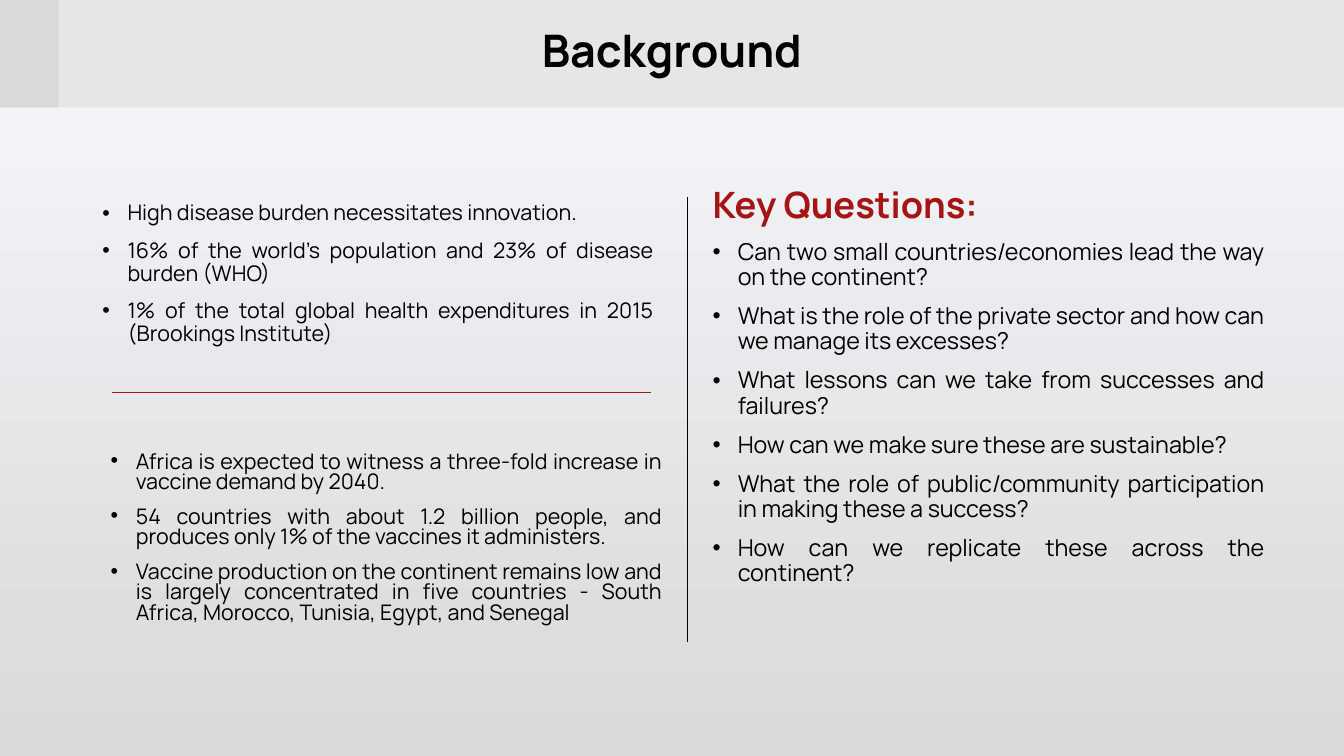
import pptx
import pptx.util
import pptx.dml.color
import pptx.enum.shapes
import pptx.enum.text
import lxml.etree

COLORS = {
    "sky": "F6F8FC",
    "gray": "D9D9D9",
    "band": "E7E5E6",
    "ink": "000000",
    "red": "A61414",
}
FONT = "Manrope"
COLUMNS, ROWS = 160, 90
WIDTH, HEIGHT = pptx.util.Inches(13.333), pptx.util.Inches(7.5)
ALIGN = pptx.enum.text.PP_ALIGN
ANCHOR = pptx.enum.text.MSO_ANCHOR

BURDEN = [
    "High disease burden necessitates innovation.",
    "16% of the world’s population and 23% of disease burden (WHO)",
    "1% of the total global health expenditures in 2015 (Brookings Institute)",
]
VACCINES = [
    "Africa is expected to witness a three-fold increase in vaccine demand by 2040.",
    "54 countries with about 1.2 billion people, and produces only 1% of the vaccines it administers.",
    "Vaccine production on the continent remains low and is largely concentrated in five countries"
    " - South Africa, Morocco, Tunisia, Egypt, and Senegal",
]
QUESTIONS = [
    "Can two small countries/economies lead the way on the continent?",
    "What is the role of the private sector and how can we manage its excesses?",
    "What lessons can we take from successes and failures?",
    "How can we make sure these are sustainable?",
    "What the role of public/community participation in making these a success?",
    "How can we replicate these across the continent?",
]


def rgb(name):
    return pptx.dml.color.RGBColor.from_string(COLORS[name])


def across(columns):
    return round(WIDTH * columns / COLUMNS)


def down(rows):
    return round(HEIGHT * rows / ROWS)


def place(box):
    left, top, width, height = box
    return across(left), down(top), across(width), down(height)


def paint_background(page):
    fill = page.background.fill
    fill.gradient()
    fill.gradient_angle = 270
    for stop, name in zip(fill.gradient_stops, ("sky", "gray")):
        stop.color.rgb = rgb(name)


def add_block(page, box, color):
    block = page.shapes.add_shape(pptx.enum.shapes.MSO_SHAPE.RECTANGLE, *place(box))
    block.shadow.inherit = False
    block.fill.solid()
    block.fill.fore_color.rgb = rgb(color)
    block.line.fill.background()


def add_rule(page, start, end, color):
    rule = page.shapes.add_connector(
        pptx.enum.shapes.MSO_CONNECTOR.STRAIGHT,
        across(start[0]), down(start[1]), across(end[0]), down(end[1]),
    )
    rule.line.color.rgb = rgb(color)
    rule.line.width = pptx.util.Pt(0.5)
    lxml.etree.SubElement(rule.line._get_or_add_ln().getparent(), pptx.oxml.ns.qn("a:effectLst"))


def add_frame(page, box, anchor=ANCHOR.TOP):
    frame = page.shapes.add_textbox(*place(box)).text_frame
    frame.word_wrap = True
    frame.vertical_anchor = anchor
    return frame


def add_para(frame, text, size, align=ALIGN.JUSTIFY, spacing=0.9, color="ink", bold=False, bullet=False):
    first = not frame.paragraphs[0].runs
    para = frame.paragraphs[0] if first else frame.add_paragraph()
    para.alignment = align
    para.line_spacing = spacing
    para.space_before = pptx.util.Pt(0 if first else 10)
    if bullet:
        properties = para._p.get_or_add_pPr()
        indent = pptx.util.Inches(0.25)
        properties.set("marL", str(indent))
        properties.set("indent", str(-indent))
        lxml.etree.SubElement(properties, pptx.oxml.ns.qn("a:buFont"), typeface="Arial")
        lxml.etree.SubElement(properties, pptx.oxml.ns.qn("a:buChar"), char="•")
    span = para.add_run()
    span.text = text
    span.font.name = FONT
    span.font.size = pptx.util.Pt(size)
    span.font.bold = bold
    span.font.color.rgb = rgb(color)


def add_header(page, box, title):
    left, top, width, height = box
    add_block(page, box, "band")
    add_block(page, (left, top, 7, height), "gray")
    frame = add_frame(page, (left + 11, top + 2.75, width - 22, 7.2), ANCHOR.MIDDLE)
    add_para(frame, title, 32, ALIGN.CENTER, bold=True)


def add_facts(page, box):
    left, top, width, height = box
    for items, shift, offset, rows, spacing in (
        (BURDEN, 0, 0, 25.8, 0.9),
        (VACCINES, 1, 29.8, 23.1, 0.8),
    ):
        frame = add_frame(page, (left + shift, top + offset, width - 1, rows))
        for item in items:
            add_para(frame, item, 15.3, spacing=spacing, bullet=True)
    middle = top + 23.2
    add_rule(page, (left + 66.5, middle), (left + 2.3, middle), "red")
    edge = left + width + 1.84
    add_rule(page, (edge, top), (edge, top + height), "ink")


def add_questions(page, box):
    frame = add_frame(page, box)
    add_para(frame, "Key Questions:", 25.9, color="red", bold=True)
    for question in QUESTIONS:
        add_para(frame, question, 16.6, bullet=True)


def main():
    deck = pptx.Presentation()
    deck.slide_width, deck.slide_height = WIDTH, HEIGHT
    page = deck.slides.add_slide(deck.slide_layouts[6])
    paint_background(page)
    add_header(page, (0, 0, COLUMNS, 12.8), "Background")
    add_facts(page, (11, 23.5, 69, 52.9))
    add_questions(page, (83.65, 21.7, 68, 53.5))
    deck.save("out.pptx")


if __name__ == "__main__":
    main()
